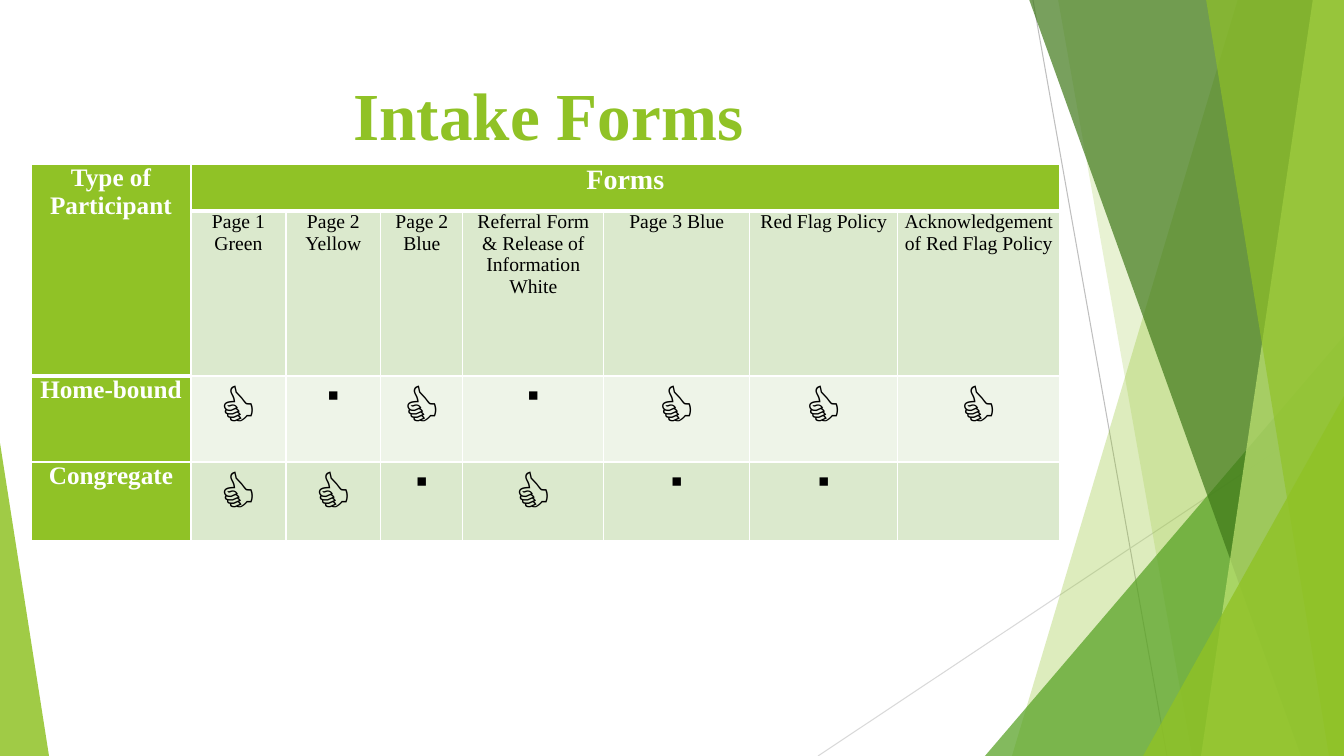
"""Build the intake forms slide with its faceted green backdrop."""
import pptx
import pptx.dml.color
import pptx.enum.shapes
import pptx.enum.text
import pptx.oxml
import pptx.oxml.ns
import pptx.util

SCALE = 12192000 / 1344
GREEN, WHITE, BLACK = "90C226", "FFFFFF", "000000"
PALE, PALER = "DBE9CD", "EEF4E8"
SERIF, SANS = "Times New Roman", "Arial"
THUMB, SQUARE = "👍", "▪"


def px(length):
    return pptx.util.Emu(round(length * SCALE))


def colour(value):
    return pptx.dml.color.RGBColor.from_string(value)


def write_text(frame, text, size=18, font=SERIF, ink=BLACK, bold=False):
    frame.word_wrap = True
    for index, line in enumerate(text.split("\n")):
        paragraph = frame.paragraphs[0] if index == 0 else frame.add_paragraph()
        paragraph.alignment = pptx.enum.text.PP_ALIGN.CENTER
        run = paragraph.add_run()
        run.text = line
        run.font.size = pptx.util.Pt(size)
        run.font.name = font
        run.font.bold = bold
        run.font.color.rgb = colour(ink)


class SlideBuilder:
    def __init__(self, slide):
        self.slide = slide
        self.namespace = pptx.oxml.ns.nsdecls("a")

    def line(self, start, end, ink):
        connector = self.slide.shapes.add_connector(
            pptx.enum.shapes.MSO_CONNECTOR.STRAIGHT, *map(px, start + end))
        connector.line.color.rgb = colour(ink)
        connector.line.width = pptx.util.Pt(0.75)
        connector._element.spPr.append(
            pptx.oxml.parse_xml(f"<a:effectLst {self.namespace}/>"))

    def paint(self, shape, fill, opacity):
        shape.shadow.inherit = False
        shape.line.fill.background()
        shape.fill.solid()
        shape.fill.fore_color.rgb = colour(fill)
        tint = shape._element.spPr.xpath("./a:solidFill/a:srgbClr")[0]
        tint.append(pptx.oxml.parse_xml(
            f'<a:alpha {self.namespace} val="{opacity * 1000}"/>'))

    def facet(self, top_left, bottom_left, fill, opacity):
        builder = self.slide.shapes.build_freeform(top_left, -1, scale=SCALE)
        builder.add_line_segments([(1344, -1), (1344, 756), (bottom_left, 756)])
        self.paint(builder.convert_to_shape(), fill, opacity)

    def triangle(self, left, top, width, apex, fill, opacity):
        shape = self.slide.shapes.add_shape(
            pptx.enum.shapes.MSO_SHAPE.ISOSCELES_TRIANGLE,
            *map(px, (left, top, width, 756 - top)))
        shape.adjustments[0] = apex
        self.paint(shape, fill, opacity)

    def title(self, left, top, width, height, text):
        box = self.slide.shapes.add_textbox(*map(px, (left, top, width, height)))
        write_text(box.text_frame, text, size=48, ink=GREEN, bold=True)

    def table(self, left, top, widths, heights):
        table = self.slide.shapes.add_table(
            len(heights), len(widths),
            *map(px, (left, top, sum(widths), sum(heights)))).table
        table.first_row = table.horz_banding = False
        for column, width in zip(table.columns, widths):
            column.width = px(width)
        for row, height in zip(table.rows, heights):
            row.height = px(height)
        return table

    def cell(self, cell, fill, top_border, bottom_border):
        cell.margin_left = cell.margin_right = px(6)
        cell.margin_top = cell.margin_bottom = 0
        cell.fill.solid()
        cell.fill.fore_color.rgb = colour(fill)
        borders = {"L": 1, "R": 1, "T": top_border, "B": bottom_border}
        properties = cell._tc.get_or_add_tcPr()
        for position, (side, points) in enumerate(borders.items()):
            properties.insert(position, pptx.oxml.parse_xml(
                f'<a:ln{side} {self.namespace} w="{points * 12700}"><a:solidFill>'
                f'<a:srgbClr val="{WHITE}"/></a:solidFill></a:ln{side}>'))


def draw_backdrop(builder):
    builder.line((1033, 0), (1167, 756), "BFBFBF")
    builder.line((1344, 406), (818, 756), "D9D9D9")
    builder.facet(1238, 1012, GREEN, 30)
    builder.facet(1058, 1192, GREEN, 20)
    builder.triangle(985, 336, 359, 1, "54A021", 72)
    builder.facet(1029, 1301, "3F7819", 70)
    builder.facet(1313, 1201, "C0E474", 70)
    builder.facet(1206, 1329, GREEN, 65)
    builder.triangle(1143, 396, 201, 1, GREEN, 80)
    builder.triangle(0, 443, 49, 0, GREEN, 85)


def draw_forms_table(builder):
    rows = [
        ["Type of Participant", "Forms", "", "", "", "", "", ""],
        ["", "Page 1 Green", "Page 2 Yellow", "Page 2 Blue",
         "Referral Form & Release of Information\nWhite", "Page 3 Blue",
         "Red Flag Policy", "Acknowledgement of Red Flag Policy"],
        ["Home-bound", THUMB, SQUARE, THUMB, SQUARE, THUMB, THUMB, THUMB],
        ["Congregate", THUMB, THUMB, SQUARE, THUMB, SQUARE, SQUARE, ""],
    ]
    body_fills = [GREEN, PALE, PALER, PALE]
    table = builder.table(31, 164, [160, 95, 95, 82, 141, 146, 148, 162],
                          [47, 165, 86, 79])
    table.cell(0, 0).merge(table.cell(1, 0))
    table.cell(0, 1).merge(table.cell(0, 7))
    for row, texts in enumerate(rows):
        for column, text in enumerate(texts):
            cell = table.cell(row, column)
            header = row == 0 or column == 0
            last_header_row = 1 if column == 0 else 0
            builder.cell(cell, GREEN if header else body_fills[row],
                         3 if row == last_header_row + 1 else 1,
                         3 if row <= last_header_row else 1)
            if not text:
                continue
            if header:
                write_text(cell.text_frame, text, ink=WHITE, bold=True,
                           size=20 if text == "Forms" else 18)
            elif row == 1:
                write_text(cell.text_frame, text, size=14)
            else:
                write_text(cell.text_frame, text, font=SANS,
                           size=41 if text == THUMB else 24)


def main():
    presentation = pptx.Presentation()
    presentation.slide_width, presentation.slide_height = px(1344), px(756)
    slide = presentation.slides.add_slide(presentation.slide_layouts[6])
    builder = SlideBuilder(slide)
    draw_backdrop(builder)
    builder.title(75, 68, 947, 145, "Intake Forms")
    draw_forms_table(builder)
    presentation.save("out.pptx")


if __name__ == "__main__":
    main()
